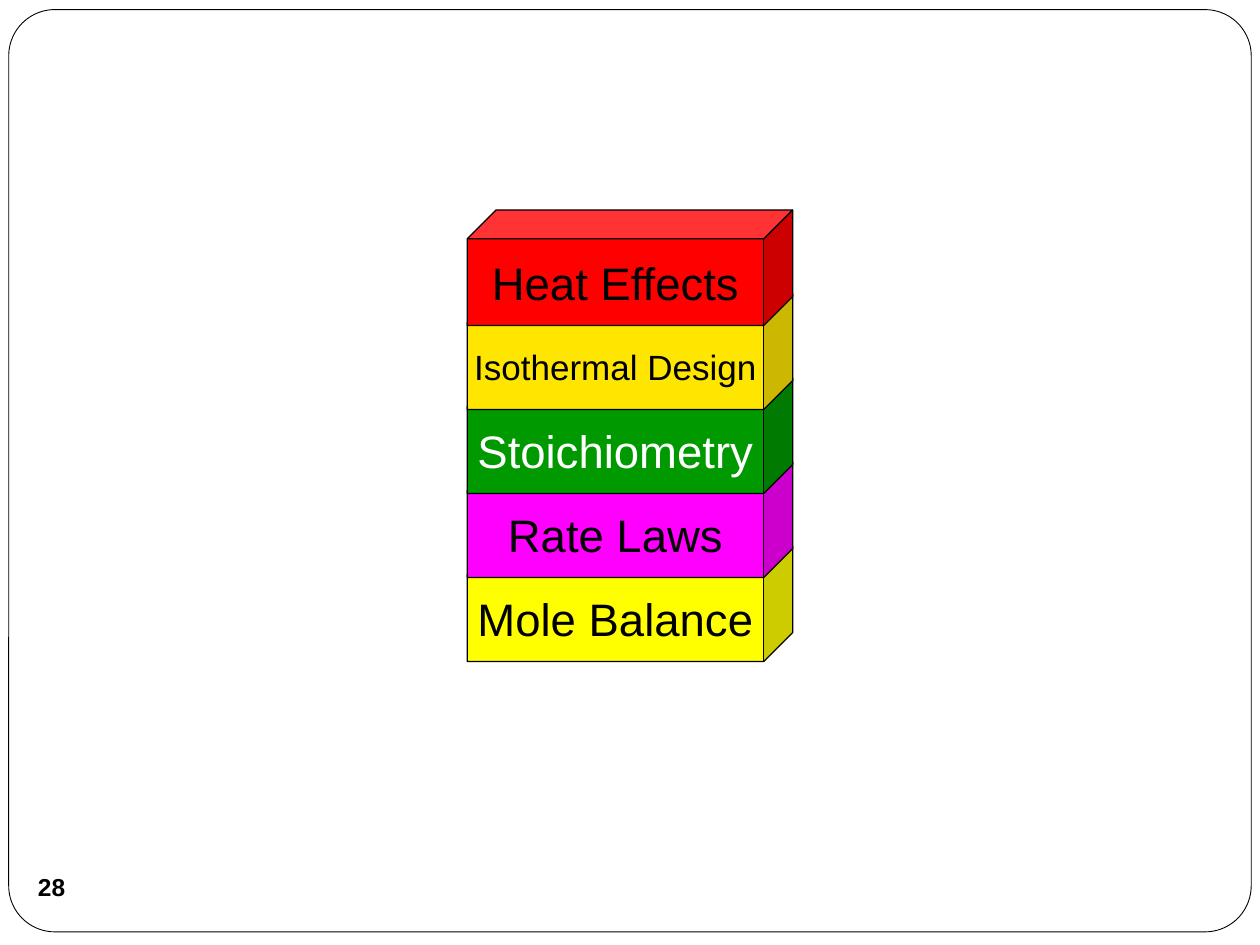
"""Build a slide with a stack of labelled reactor design blocks."""

from dataclasses import dataclass

from pptx import Presentation
from pptx.dml.color import RGBColor as Rgb
from pptx.enum.shapes import MSO_SHAPE as Kind
from pptx.enum.text import MSO_ANCHOR as Anchor, PP_ALIGN as Align
from pptx.shapes.autoshape import Shape
from pptx.slide import Slide
from pptx.util import Pt


@dataclass(frozen=True)
class Theme:
    font: str = "Arial"
    black: str = "000000"
    white: str = "FFFFFF"
    yellow: str = "FFFF00"
    pink: str = "FF00FF"
    green: str = "009900"
    gold: str = "FFE600"
    red: str = "FF0000"
    large: float = 26
    medium: float = 20
    small: float = 14


@dataclass(frozen=True)
class Box:
    left: float
    top: float
    width: float
    height: float


@dataclass(frozen=True)
class Block:
    label: str
    fill: str
    ink: str
    size: float


THEME = Theme()
BLOCKS = (
    Block("Mole Balance", THEME.yellow, THEME.black, THEME.large),
    Block("Rate Laws", THEME.pink, THEME.black, THEME.large),
    Block("Stoichiometry", THEME.green, THEME.white, THEME.large),
    Block("Isothermal Design", THEME.gold, THEME.black, THEME.medium),
    Block("Heat Effects", THEME.red, THEME.black, THEME.large),
)
BASE = Box(267, 312, 186, 66)
STEP = 48


def add_shape(slide: Slide, kind: Kind, box: Box, fill: str, line: float = 0) -> Shape:
    shape = slide.shapes.add_shape(
        kind, Pt(box.left), Pt(box.top), Pt(box.width), Pt(box.height)
    )
    shape.shadow.inherit = False
    shape.fill.solid()
    shape.fill.fore_color.rgb = Rgb.from_string(fill)
    if line:
        shape.line.color.rgb = Rgb.from_string(THEME.black)
        shape.line.width = Pt(line)
    else:
        shape.line.fill.background()
    return shape


def set_label(shape: Shape, label: str, size: float, ink: str, bold: bool = False) -> None:
    frame = shape.text_frame
    frame.text = label
    frame.word_wrap = False
    frame.vertical_anchor = Anchor.MIDDLE
    line = frame.paragraphs[0]
    line.alignment = Align.CENTER
    font = line.runs[0].font
    font.name = THEME.font
    font.size = Pt(size)
    font.bold = bold
    font.color.rgb = Rgb.from_string(ink)


def add_frame(slide: Slide) -> None:
    frame = add_shape(slide, Kind.ROUNDED_RECTANGLE, Box(5, 5.5, 710, 527), THEME.white, 0.5)
    frame.adjustments[0] = 0.05


def add_stack(slide: Slide) -> None:
    for level, block in enumerate(BLOCKS):
        box = Box(BASE.left, BASE.top - level * STEP, BASE.width, BASE.height)
        cube = add_shape(slide, Kind.CUBE, box, block.fill, 0.75)
        cube.adjustments[0] = 0.25
        set_label(cube, block.label, block.size, block.ink)


def add_number(slide: Slide) -> None:
    badge = add_shape(slide, Kind.OVAL, Box(11.5, 489, 36, 36), THEME.white)
    set_label(badge, "28", THEME.small, THEME.black, bold=True)
    frame = badge.text_frame
    frame.margin_left = frame.margin_right = Pt(0)
    frame.margin_top = frame.margin_bottom = Pt(0)


def main() -> None:
    deck = Presentation()
    deck.slide_width, deck.slide_height = Pt(720), Pt(540)
    slide = deck.slides.add_slide(deck.slide_layouts[6])
    add_frame(slide)
    add_stack(slide)
    add_number(slide)
    deck.save("out.pptx")


if __name__ == "__main__":
    main()
